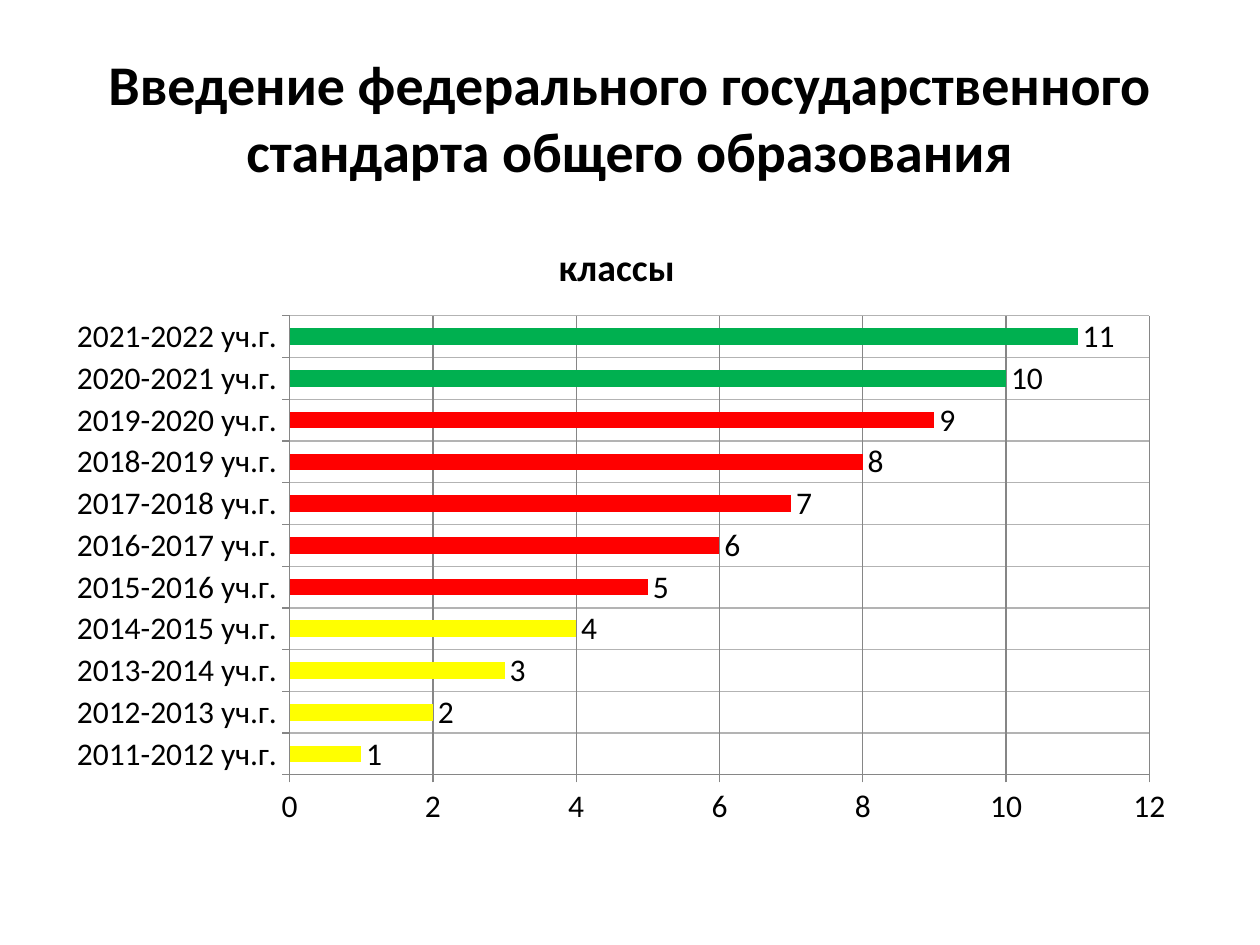
from dataclasses import dataclass

from pptx import Presentation
from pptx import util as u
from pptx.chart.data import CategoryChartData
from pptx.dml.color import RGBColor
from pptx.enum import chart as charts
from pptx.enum import text


@dataclass(frozen=True)
class Theme:
    font: str = "Calibri"
    ink: str = "000000"
    axis: str = "868686"
    grid: str = "B3B3B3"
    series: str = "4F81BD"
    primary: str = "FFFF00"
    middle: str = "FF0000"
    senior: str = "00B050"
    title_size: float = 32
    chart_title_size: float = 21.6
    chart_size: float = 18


THEME = Theme()
TITLE = "Введение федерального государственного стандарта общего образования"
CHART_TITLE = "классы "
FIRST_YEAR = 2011
GRADES = range(1, 12)


def apply_format(target, values):
    for name, value in values.items():
        setattr(target, name, value)


def format_font(font, size, bold):
    apply_format(font, {"name": THEME.font, "size": u.Pt(size), "bold": bold})
    font.color.rgb = RGBColor.from_string(THEME.ink)


def format_line(line, color):
    line.color.rgb = RGBColor.from_string(color)
    line.width = u.Pt(0.75)


def fill_solid(element, color):
    element.format.fill.solid()
    element.format.fill.fore_color.rgb = RGBColor.from_string(color)


def stage_color(grade):
    if grade <= 4:
        return THEME.primary
    return THEME.middle if grade <= 9 else THEME.senior


def place_title(slide, left, top, width, height):
    title = slide.shapes.title
    apply_format(title, {"left": left, "top": top, "width": width, "height": height})
    frame = title.text_frame
    frame.text = TITLE
    apply_format(frame, {"word_wrap": True, "vertical_anchor": text.MSO_ANCHOR.MIDDLE})
    paragraph = frame.paragraphs[0]
    paragraph.alignment = text.PP_ALIGN.CENTER
    format_font(paragraph.runs[0].font, THEME.title_size, True)


def format_axis(axis, grid_color):
    apply_format(axis, {
        "has_major_gridlines": True,
        "major_tick_mark": charts.XL_TICK_MARK.OUTSIDE,
        "minor_tick_mark": charts.XL_TICK_MARK.NONE,
    })
    format_line(axis.format.line, THEME.axis)
    format_line(axis.major_gridlines.format.line, grid_color)
    format_font(axis.tick_labels.font, THEME.chart_size, False)


def format_bars(plot):
    apply_format(plot, {"gap_width": 150, "vary_by_categories": False,
                        "has_data_labels": True})
    apply_format(plot.data_labels, {
        "show_value": True,
        "position": charts.XL_LABEL_POSITION.OUTSIDE_END,
    })
    format_font(plot.data_labels.font, THEME.chart_size, False)
    series = plot.series[0]
    fill_solid(series, THEME.series)
    for index, grade in enumerate(GRADES):
        fill_solid(series.points[index], stage_color(grade))


def place_chart(slide, left, top, width, height):
    data = CategoryChartData(number_format="General")
    years = range(FIRST_YEAR, FIRST_YEAR + len(GRADES))
    data.categories = [f"{year}-{year + 1} уч.г." for year in years]
    data.add_series(CHART_TITLE, GRADES)
    chart = slide.shapes.add_chart(
        charts.XL_CHART_TYPE.BAR_CLUSTERED, left, top, width, height, data).chart
    apply_format(chart, {"has_legend": False, "has_title": True})
    format_font(chart.font, THEME.chart_size, False)
    title_frame = chart.chart_title.text_frame
    title_frame.text = CHART_TITLE
    format_font(title_frame.paragraphs[0].runs[0].font, THEME.chart_title_size, True)
    chart.chart_title.include_in_layout = False
    format_axis(chart.category_axis, THEME.grid)
    format_axis(chart.value_axis, THEME.axis)
    apply_format(chart.value_axis, {"minimum_scale": 0, "maximum_scale": 12,
                                    "major_unit": 2})
    format_bars(chart.plots[0])


def main():
    presentation = Presentation()
    apply_format(presentation, {"slide_width": u.Inches(10),
                                "slide_height": u.Inches(7.5)})
    slide = presentation.slides.add_slide(presentation.slide_layouts.get_by_name("Title Only"))
    place_title(slide, u.Inches(0.5), u.Inches(0.3), u.Inches(9), u.Inches(1.25))
    place_chart(slide, u.Inches(0.43), u.Inches(1.7), u.Inches(9), u.Inches(4.95))
    presentation.save("out.pptx")


if __name__ == "__main__":
    main()
